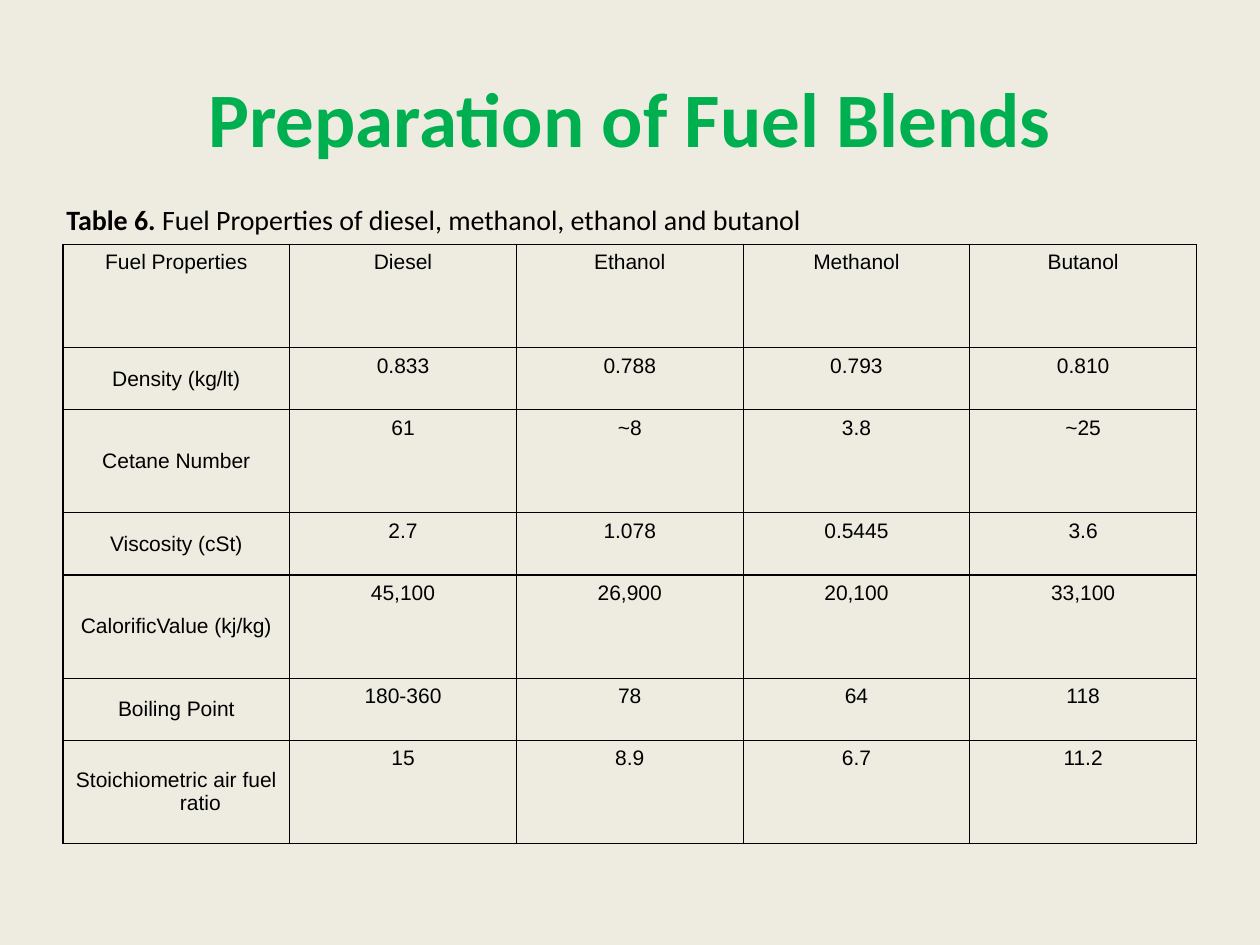
from lxml.etree import SubElement
from pptx import Presentation
from pptx.dml.color import RGBColor
from pptx.enum.text import MSO_ANCHOR as Anchor, PP_ALIGN as Align
from pptx.oxml.ns import qn
from pptx.util import Cm, Pt

TITLE = {"name": "Calibri", "size": Pt(44), "bold": True}
LABEL = {"name": "Calibri", "size": Pt(16), "bold": True}
NOTE = {**LABEL, "bold": False}
CELL = {"name": "Arial", "size": Pt(12), "bold": False}

ROWS = [
    ("Fuel Properties", "Diesel", "Ethanol", "Methanol", "Butanol"),
    ("Density (kg/lt)", "0.833", "0.788", "0.793", "0.810"),
    ("Cetane Number", "61", "~8", "3.8", "~25"),
    ("Viscosity (cSt)", "2.7", "1.078", "0.5445", "3.6"),
    ("CalorificValue (kj/kg)", "45,100", "26,900", "20,100", "33,100"),
    ("Boiling Point", "180-360", "78", "64", "118"),
    ("Stoichiometric air fuel ratio", "15", "8.9", "6.7", "11.2"),
]
TALL, LOW = Cm(2.08), Cm(1.25)
WIDE = Cm(4.57)
HANG = Cm(0.97)


def paint(item, color):
    item.rgb = RGBColor.from_string(color)


def add_run(para, text, style, color="000000"):
    run = para.add_run()
    run.text = text
    for key, value in style.items():
        setattr(run.font, key, value)
    paint(run.font.color, color)


def set_title(slide):
    title = slide.shapes.title
    spot = {"left": Cm(1.27), "top": Cm(0.76), "width": Cm(22.86), "height": Cm(3.18)}
    for key, value in spot.items():
        setattr(title, key, value)
    title.text_frame.vertical_anchor = Anchor.MIDDLE
    para = title.text_frame.paragraphs[0]
    para.alignment = Align.CENTER
    add_run(para, "Preparation of Fuel Blends", TITLE, "00B050")


def add_caption(slide):
    box = slide.shapes.add_textbox(Cm(1.09), Cm(3.96), Cm(19.96), Cm(0.94))
    frame = box.text_frame
    frame.word_wrap = True
    frame.vertical_anchor = Anchor.MIDDLE
    para = frame.paragraphs[0]
    add_run(para, "Table 6.", LABEL)
    add_run(para, " Fuel Properties of diesel, methanol, ethanol and butanol", NOTE)


def set_edges(cell, sizes):
    """Draw black borders; sizes maps the sides L, R, T, B to points."""
    props = cell._tc.get_or_add_tcPr()
    for spot, side in enumerate("LRTB"):
        line = SubElement(props, qn(f"a:ln{side}"), w=str(Pt(sizes[side])))
        fill = SubElement(line, qn("a:solidFill"))
        SubElement(fill, qn("a:srgbClr"), val="000000")
        props.insert(spot, line)


def fill_cell(cell, text, anchor, sizes):
    cell.fill.background()
    cell.vertical_anchor = anchor
    para = cell.text_frame.paragraphs[0]
    para.alignment = Align.CENTER
    props = para._p.get_or_add_pPr()
    props.set("marL", str(HANG))
    props.set("indent", str(-HANG))
    add_run(para, text, CELL)
    set_edges(cell, sizes)


def add_grid(slide):
    count, cols = len(ROWS), len(ROWS[0])
    highs = [LOW if row % 2 else TALL for row in range(count)]
    table = slide.shapes.add_table(
        count, cols, Cm(1.27), Cm(4.93), WIDE * cols, sum(highs)
    ).table
    table.first_row = table.horz_banding = False
    for col in table.columns:
        col.width = WIDE
    for row, texts in enumerate(ROWS):
        table.rows[row].height = highs[row]
        sizes = {
            "L": 0.75,
            "R": 0.75,
            "T": 1 if row < 2 else 0.75,
            "B": 1 if row in (0, count - 1) else 0.75,
        }
        for col, text in enumerate(texts):
            anchor = Anchor.MIDDLE if row and not col else Anchor.TOP
            fill_cell(table.cell(row, col), text, anchor, sizes)


def main():
    deck = Presentation()
    deck.slide_width, deck.slide_height = Cm(25.4), Cm(19.05)
    slide = deck.slides.add_slide(deck.slide_layouts[5])
    back = slide.background.fill
    back.solid()
    paint(back.fore_color, "EEECE1")
    set_title(slide)
    add_caption(slide)
    add_grid(slide)
    deck.save("out.pptx")


if __name__ == "__main__":
    main()
